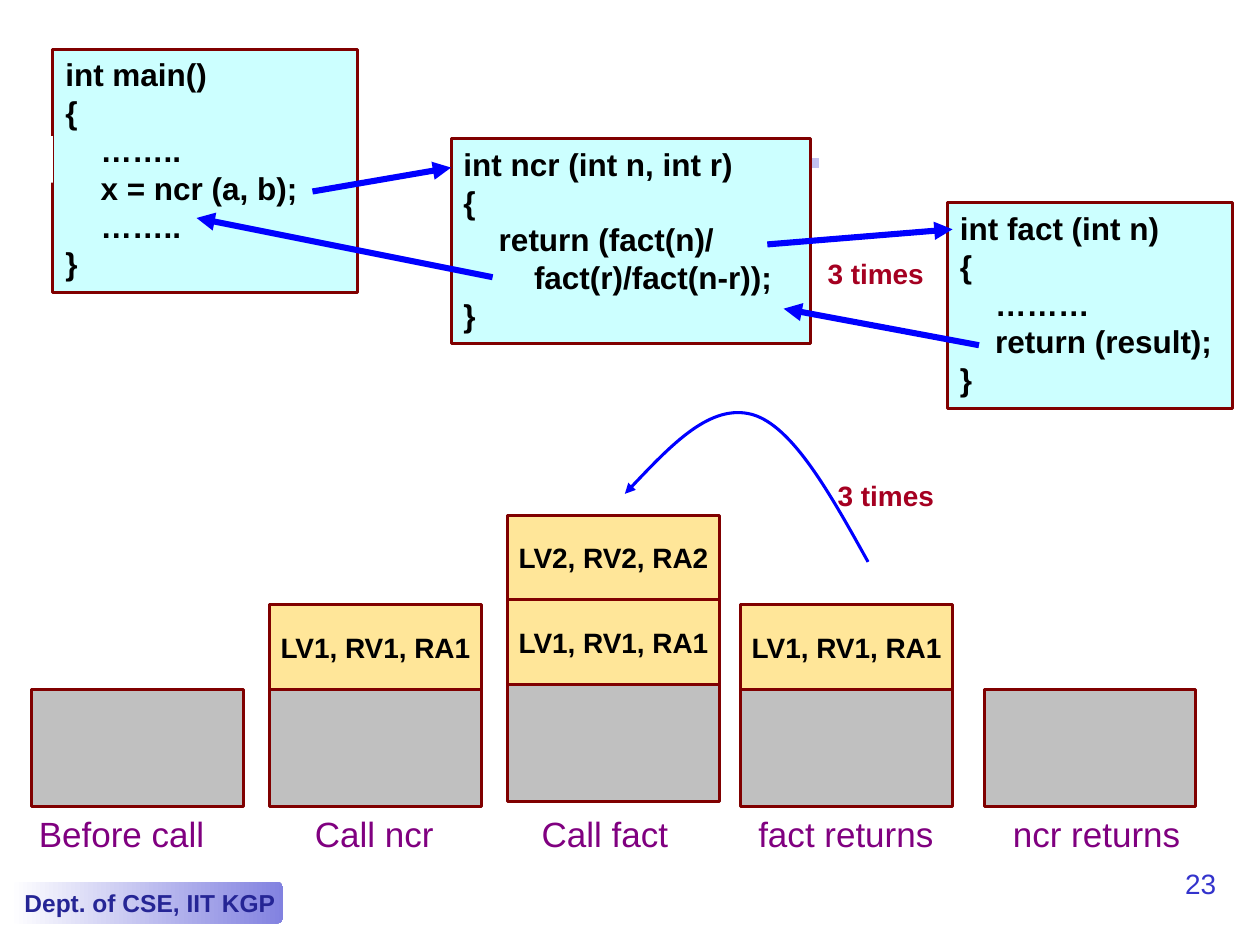
from dataclasses import dataclass

from lxml.etree import SubElement
from pptx import Presentation
from pptx.dml.color import RGBColor
from pptx.enum.shapes import MSO_CONNECTOR as Connector, MSO_SHAPE as Shape
from pptx.enum.text import MSO_ANCHOR as Anchor, MSO_AUTO_SIZE as AutoSize, PP_ALIGN as Align
from pptx.oxml.ns import qn
from pptx.util import Inches, Pt


@dataclass(frozen=True)
class Theme:
    font: str = "Arial"
    white: str = "FFFFFF"
    ink: str = "000000"
    border: str = "800000"
    code_fill: str = "CCFFFF"
    frame_fill: str = "FFE699"
    base_fill: str = "C0C0C0"
    arrow: str = "0000FF"
    caption: str = "800080"
    note: str = "A50021"
    accent: str = "3333CC"
    footer_fill: str = "8282E0"
    footer_text: str = "252595"
    caption_size: int = 20
    code_size: int = 18
    label_size: int = 16
    footer_size: int = 14
    border_width: float = 1.75
    arrow_width: float = 3.5


THEME = Theme()
INDENT = 0.28
FRAME_HEIGHT = 0.67
STACK_WIDTH = 1.68
BASE_HEIGHT = 0.93


def rgb(color):
    return RGBColor.from_string(color)


def write(shape, lines, size, color, bold=False, align=Align.LEFT,
          anchor=Anchor.TOP, wrap=True, grow=False):
    """Fill a shape with lines given as (indent level, text)."""
    frame = shape.text_frame
    frame.word_wrap = wrap
    frame.vertical_anchor = anchor
    frame.auto_size = AutoSize.SHAPE_TO_FIT_TEXT if grow else AutoSize.NONE
    frame.text = "\n".join(text for _, text in lines)
    for paragraph, (level, _) in zip(frame.paragraphs, lines):
        paragraph.alignment = align
        if level:
            paragraph._p.get_or_add_pPr().set("marL", str(Inches(level * INDENT)))
        font = paragraph.runs[0].font
        font.name, font.size, font.bold = THEME.font, Pt(size), bold
        font.color.rgb = rgb(color)


def add_box(slide, left, top, width, height, fill, border=None, kind=Shape.RECTANGLE):
    """Add a shape; a pair of colours as fill gives a left-to-right gradient."""
    box = slide.shapes.add_shape(kind, *map(Inches, (left, top, width, height)))
    box.shadow.inherit = False
    if isinstance(fill, tuple):
        box.fill.gradient()
        box.fill.gradient_angle = 0
        for stop, color in zip(box.fill.gradient_stops, fill):
            stop.color.rgb = rgb(color)
    else:
        box.fill.solid()
        box.fill.fore_color.rgb = rgb(fill)
    if border:
        box.line.color.rgb = rgb(border)
        box.line.width = Pt(THEME.border_width)
    else:
        box.line.fill.background()
    return box


def add_label(slide, left, top, width, height, text, size, color, **style):
    label = slide.shapes.add_textbox(*map(Inches, (left, top, width, height)))
    write(label, [(0, text)], size, color, **style)


def add_code(slide, left, top, width, height, lines):
    box = add_box(slide, left, top, width, height, THEME.code_fill, THEME.border)
    write(box, lines, THEME.code_size, THEME.ink, bold=True, grow=True)


def add_stack(slide, left, bottom, frames):
    """Add a grey base with the activation records piled on it."""
    top = bottom - BASE_HEIGHT
    add_box(slide, left, top, STACK_WIDTH, BASE_HEIGHT, THEME.base_fill, THEME.border)
    for record in frames:
        top -= FRAME_HEIGHT
        box = add_box(slide, left, top, STACK_WIDTH, FRAME_HEIGHT,
                      THEME.frame_fill, THEME.border)
        write(box, [(0, record)], THEME.label_size, THEME.ink, bold=True,
              align=Align.CENTER, anchor=Anchor.MIDDLE, wrap=False)


def style_arrow(arrow, width):
    arrow.line.color.rgb = rgb(THEME.arrow)
    arrow.line.width = Pt(width)
    SubElement(arrow.line._get_or_add_ln(), qn("a:tailEnd"), type="triangle")


def add_arrow(slide, start, end):
    arrow = slide.shapes.add_connector(Connector.STRAIGHT, *map(Inches, start + end))
    style_arrow(arrow, THEME.arrow_width)
    SubElement(arrow._element.spPr, qn("a:effectLst"))


def add_curved_arrow(slide, start, controls):
    """Add a Bezier arrow; each three control points make one segment."""
    builder = slide.shapes.build_freeform(*map(Inches, start))
    builder.add_line_segments([tuple(map(Inches, point)) for point in controls], close=False)
    curve = builder.convert_to_shape()
    curve.shadow.inherit = False
    curve.fill.background()
    style_arrow(curve, THEME.border_width)
    outline = next(curve._element.iter(qn("a:path")))
    straights = outline.findall(qn("a:lnTo"))
    for first in range(0, len(straights), 3):
        bezier = SubElement(outline, qn("a:cubicBezTo"))
        for straight in straights[first:first + 3]:
            bezier.append(straight[0])
            outline.remove(straight)


def main():
    deck = Presentation()
    deck.slide_width, deck.slide_height = Inches(10), Inches(7.5)
    slide = deck.slides.add_slide(deck.slide_layouts[6])

    # Title rule, footer and page number
    add_box(slide, 0.33, 1.25, 8.83, 0.08, (THEME.accent, THEME.white))
    footer = add_box(slide, 0.08, 7, 2.17, 0.33, (THEME.white, THEME.footer_fill),
                     kind=Shape.ROUNDED_RECTANGLE)
    write(footer, [(0, "Dept. of CSE, IIT KGP")], THEME.footer_size, THEME.footer_text,
          bold=True, anchor=Anchor.MIDDLE, wrap=False)
    add_label(slide, 9.17, 6.83, 0.58, 0.5, "23", THEME.label_size, THEME.accent,
              align=Align.RIGHT)

    # Code of the three functions
    add_box(slide, 2.75, 1.08, 0.83, 0.37, THEME.white)
    add_code(slide, 0.42, 0.39, 2.42, 1.93, [
        (0, "int main()"), (0, "{"), (1, "…….."), (1, "x = ncr (a, b);"),
        (1, "…….."), (0, "}")])
    add_code(slide, 3.58, 1.1, 2.85, 1.63, [
        (0, "int ncr (int n, int r)"), (0, "{"), (1, "return (fact(n)/"),
        (2, "fact(r)/fact(n-r));"), (0, "}")])
    add_code(slide, 7.52, 1.61, 2.26, 1.63, [
        (0, "int fact (int n)"), (0, "{"), (1, "………"), (1, "return (result);"),
        (0, "}")])

    # Calls and returns
    for start, end in (((2.48, 1.52), (3.58, 1.33)), ((3.91, 2.2), (1.56, 1.73)),
                       ((6.09, 1.94), (7.56, 1.82)), ((7.77, 2.74), (6.22, 2.45))):
        add_arrow(slide, start, end)

    # Stack at each stage: left, bottom, records, caption, caption left and width
    ncr_record, fact_record = "LV1, RV1, RA1", "LV2, RV2, RA2"
    stages = (
        (0.25, 6.4, [], "Before call", 0.21, 2.06),
        (2.14, 6.4, [ncr_record], "Call ncr", 2.4, 1.55),
        (4.03, 6.36, [ncr_record, fact_record], "Call fact", 4.2, 1.35),
        (5.88, 6.4, [ncr_record], "fact returns", 5.92, 1.6),
        (7.81, 6.4, [], "ncr returns", 7.94, 1.6),
    )
    for left, bottom, records, caption, caption_left, caption_width in stages:
        add_stack(slide, left, bottom, records)
        add_label(slide, caption_left, 6.4, caption_width, 0.43, caption,
                  THEME.caption_size, THEME.caption, grow=True)

    # Repetition of the fact call
    add_curved_arrow(slide, (6.89, 4.46), [
        (6.59, 3.92), (6.29, 3.38), (5.97, 3.29),
        (5.64, 3.2), (5.3, 3.56), (4.96, 3.92)])
    for left, top in ((6.47, 1.99), (6.55, 3.75)):
        add_label(slide, left, top, 1.43, 0.37, "3 times", THEME.label_size,
                  THEME.note, bold=True, grow=True)

    # White patches that interrupt the title rule
    for left, width in ((0.3, 0.12), (6.5, 2.58)):
        add_box(slide, left, 1.08, width, 0.37, THEME.white)

    deck.save("out.pptx")


if __name__ == "__main__":
    main()
